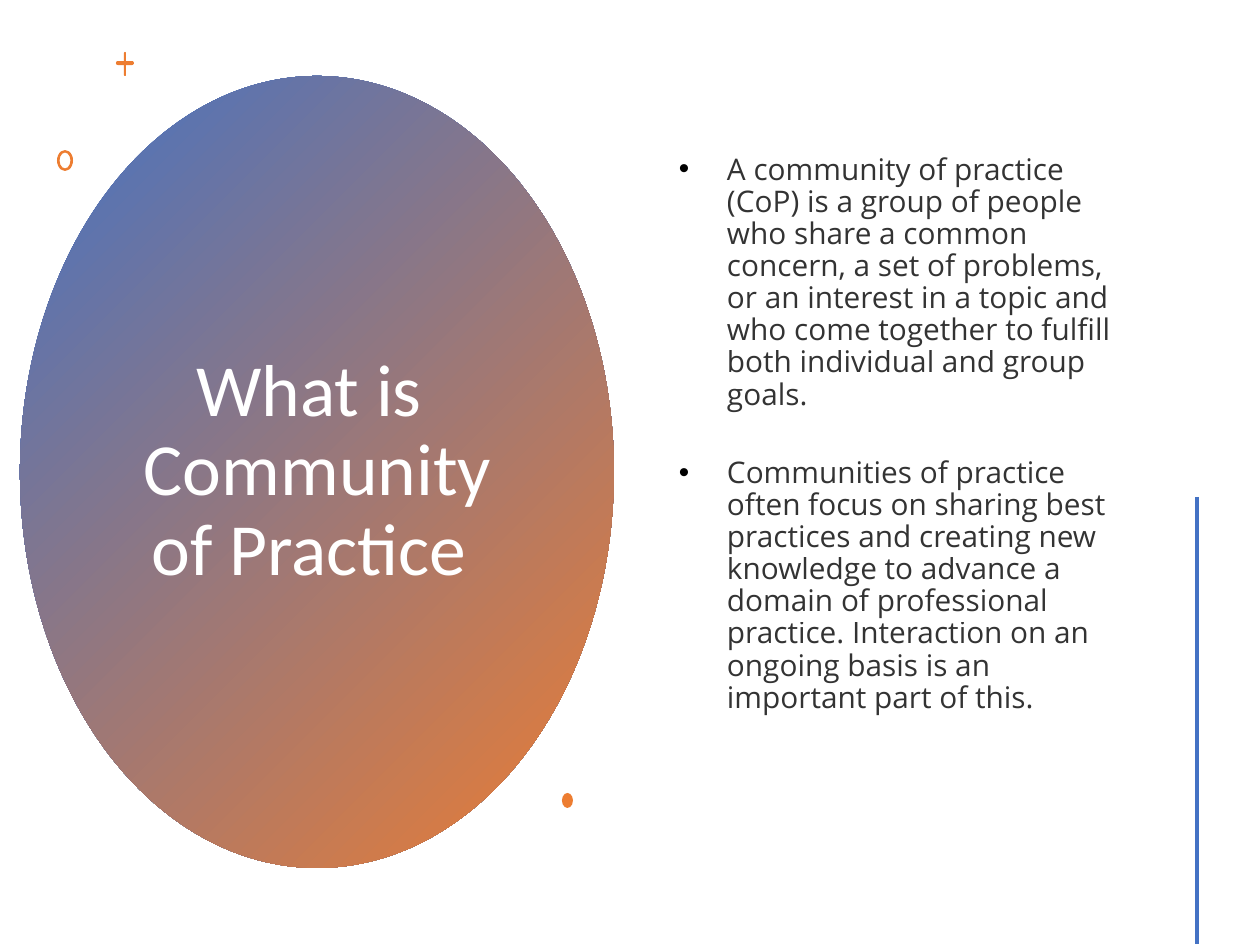
from dataclasses import dataclass

from lxml import etree
from pptx import Presentation
from pptx import util as u
from pptx.dml import color
from pptx.enum import shapes, text
from pptx.oxml import ns

SCALE = 914400 / 126
BLUE, ORANGE, WHITE, BLACK = "4472C4", "ED7D31", "FFFFFF", "000000"
TITLE = "What is  Community of Practice "
POINTS = (
    "A community of practice (CoP) is a group of people who share a common "
    "concern, a set of problems, or an interest in a topic and who come "
    "together to fulfill both individual and group goals.",
    "Communities of practice often focus on sharing best practices and "
    "creating new knowledge to advance a domain of professional practice. "
    "Interaction on an ongoing basis is an important part of this.",
)


@dataclass
class Ornament:
    preset: shapes.MSO_SHAPE
    left: int
    top: int
    width: int
    height: int
    adjustment: float | None = None


ORNAMENTS = (
    Ornament(shapes.MSO_SHAPE.ROUNDED_RECTANGLE, 116, 61, 18, 4, 0.5),
    Ornament(shapes.MSO_SHAPE.ROUNDED_RECTANGLE, 124, 52, 2, 24, 0.5),
    Ornament(shapes.MSO_SHAPE.DONUT, 57, 150, 16, 21, 0.16),
    Ornament(shapes.MSO_SHAPE.OVAL, 562, 793, 11, 15),
)


def px(length: int) -> u.Emu:
    return u.Emu(round(length * SCALE))


def rgb(value: str) -> color.RGBColor:
    return color.RGBColor.from_string(value)


def apply(target, values: dict) -> None:
    for name, value in values.items():
        setattr(target, name, value)


def add_child(parent, tag: str, **attributes: str):
    return etree.SubElement(parent, ns.qn(tag), attributes)


def add_shape(page, item: Ornament):
    shape = page.shapes.add_shape(
        item.preset, px(item.left), px(item.top), px(item.width), px(item.height))
    shape.shadow.inherit = False
    shape.line.fill.background()
    if item.adjustment is not None:
        shape.adjustments[0] = item.adjustment
    return shape


def place(box, left: int, top: int, width: int, height: int, bottom: int = 6):
    apply(box, dict(left=px(left), top=px(top), width=px(width), height=px(height)))
    apply(box.text_frame, dict(
        word_wrap=True, auto_size=text.MSO_AUTO_SIZE.NONE,
        vertical_anchor=text.MSO_ANCHOR.MIDDLE,
        margin_left=px(13), margin_right=px(13),
        margin_top=px(6), margin_bottom=px(bottom)))


def add_span(para, words: str, size: int, font: str, fill: str):
    span = para.add_run()
    span.text = words
    apply(span.font, dict(size=u.Pt(size), name=font))
    span.font.color.rgb = rgb(fill)
    return span


def add_point(para, words: str) -> None:
    apply(para, dict(line_spacing=0.9, space_before=u.Pt(7.5), space_after=u.Pt(18.8)))
    properties = para._p.get_or_add_pPr()
    properties.set("marL", str(px(63)))
    properties.set("indent", str(px(-48)))
    bullet = add_child(properties, "a:buClr")
    add_child(bullet, "a:srgbClr", val=BLACK)
    add_child(properties, "a:buFont", typeface="Arial")
    add_child(properties, "a:buChar", char="•")
    span = add_span(para, words, 17, "Open Sans", BLACK)
    for fill in span.font._element.iter(ns.qn("a:srgbClr")):
        add_child(fill, "a:alpha", val="80000")


def main() -> None:
    deck = Presentation()
    apply(deck, dict(slide_width=px(1260), slide_height=px(945)))
    page = deck.slides.add_slide(deck.slide_layouts[1])
    title, body = page.placeholders

    oval = add_shape(page, Ornament(shapes.MSO_SHAPE.OVAL, 20, 76, 594, 792))
    oval.fill.gradient()
    oval.fill.gradient_angle = 315
    for stop, shade, position in zip(oval.fill.gradient_stops, (BLUE, ORANGE), (0, 1)):
        stop.color.rgb = rgb(shade)
        stop.position = position
    title.element.addprevious(oval.element)

    place(title, 129, 178, 377, 588)
    heading = title.text_frame.paragraphs[0]
    apply(heading, dict(alignment=text.PP_ALIGN.CENTER, line_spacing=0.9))
    add_span(heading, TITLE, 42, "Calibri", WHITE)

    place(body, 651, 72, 493, 804, bottom=85)
    frame = body.text_frame
    for index, words in enumerate(POINTS):
        add_point(frame.add_paragraph() if index else frame.paragraphs[0], words)

    for item in ORNAMENTS:
        shape = add_shape(page, item)
        shape.fill.solid()
        shape.fill.fore_color.rgb = rgb(ORANGE)

    rule = page.shapes.add_connector(
        shapes.MSO_CONNECTOR.STRAIGHT, px(1197), px(497), px(1197), px(944))
    rule.line.width = u.Pt(2)
    rule.line.color.rgb = rgb(BLUE)
    add_child(rule.element.spPr, "a:effectLst")

    deck.save("out.pptx")


if __name__ == "__main__":
    main()
